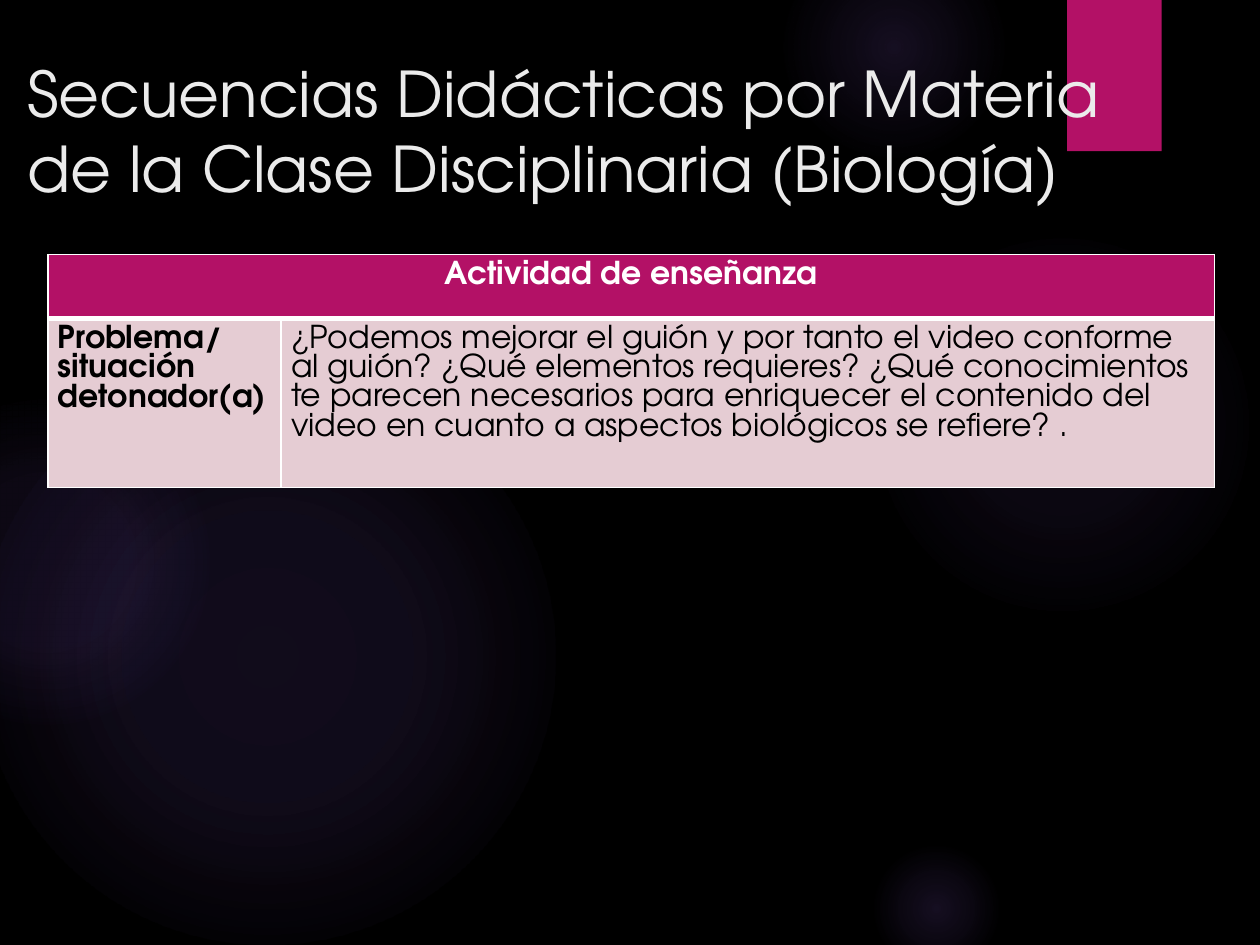
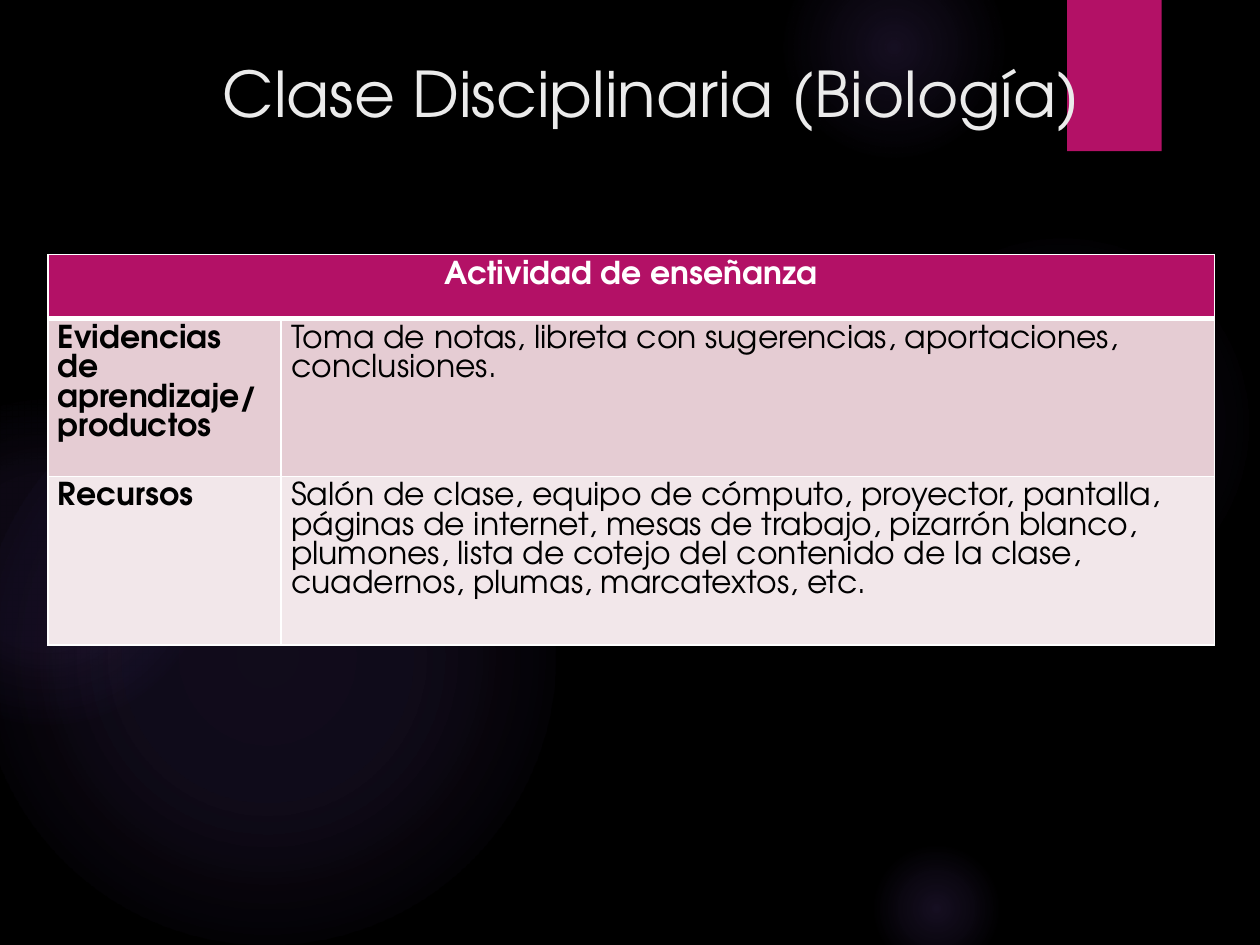
from lxml import etree
from pptx import Presentation
from pptx.dml.color import RGBColor
from pptx.enum.shapes import MSO_SHAPE
from pptx.enum.text import MSO_ANCHOR, PP_ALIGN
from pptx.oxml import parse_xml
from pptx.oxml.ns import nsdecls, qn
from pptx.util import Inches, Pt

ELLIPSE, RECTANGLE = MSO_SHAPE.OVAL, MSO_SHAPE.RECTANGLE
TOP = MSO_ANCHOR.TOP
LEFT, CENTER = PP_ALIGN.LEFT, PP_ALIGN.CENTER

FONT = "TeX Gyre Adventor"
BLACK, WHITE, TITLE_GREY = "000000", "FFFFFF", "EBEBEB"
MAGENTA, GLOW = "B31166", "9B6BF2"
ROW_TINTS = ("E5CCD3", "F2E7EA")

# left, top, diameter, then (position %, opacity %) of each gradient stop
GLOWS = (
    (6.89, 1.83, 3.08, ((0, 7), (36, 6), (69, 0))),
    (6.22, -0.5, 1.75, ((0, 14), (36, 7), (73, 0))),
    (6.89, 6.67, 1.08, ((0, 14), (36, 7), (66, 0))),
    (-0.17, 2.92, 4.58, ((0, 11), (36, 10), (75, 0))),
    (-0.92, 3.17, 2.58, ((0, 8), (36, 8), (72, 0))),
)
RIBBON_BOX = (8.47, 0, 0.75, 1.2)
TABLE_LEFT, TABLE_TOP = 0.38, 2.02
COLUMN_WIDTHS = (1.85, 7.41)
HEADER_HEIGHT = 0.51
HEADING = "Actividad de enseñanza"

SLIDES = (
    {
        "title": "Secuencias Didácticas por Materia\vde la Clase Disciplinaria (Biología)",
        "title_box": (0.12, 0.38, 9.88, 1.56),
        "rows": (
            (1.34, "Problema/\nsituación detonador(a)",
             "¿Podemos mejorar el guión y por tanto el video conforme al guión? "
             "¿Qué elementos requieres? ¿Qué conocimientos te parecen necesarios "
             "para enriquecer el contenido del video en cuanto a aspectos "
             "biológicos se refiere? ."),
        ),
    },
    {
        "title": "Clase Disciplinaria (Biología)",
        "title_box": (1.67, 0.38, 7.62, 1.56),
        "rows": (
            (1.25, "Evidencias de aprendizaje/\nproductos",
             "Toma de notas, libreta con sugerencias, aportaciones, conclusiones."),
            (1.34, "Recursos",
             "Salón de clase, equipo de cómputo, proyector, pantalla, páginas de "
             "internet, mesas de trabajo, pizarrón blanco, plumones, lista de "
             "cotejo del contenido de la clase, cuadernos, plumas, marcatextos, etc."),
        ),
    },
)


def rgb(hex_value):
    return RGBColor.from_string(hex_value)


def inches(box):
    return [Inches(length) for length in box]


def set_solid(fill, color):
    fill.solid()
    fill.fore_color.rgb = rgb(color)


def write_text(frame, text, size, color, bold=False, align=LEFT, line_spacing=None):
    frame.word_wrap = True
    frame.text = text
    for paragraph in frame.paragraphs:
        paragraph.alignment = align
        if line_spacing:
            paragraph.line_spacing = Pt(line_spacing)
        for run in paragraph.runs:
            for attribute, value in {"name": FONT, "size": Pt(size), "bold": bold}.items():
                setattr(run.font, attribute, value)
            run.font.color.rgb = rgb(color)


def add_plain_shape(slide, kind, box):
    shape = slide.shapes.add_shape(kind, *inches(box))
    shape.shadow.inherit = False
    shape.line.fill.background()
    return shape


def add_glow(slide, left, top, diameter, stops):
    """A circle that fades out from its centre."""
    glow = add_plain_shape(slide, ELLIPSE, (left, top, diameter, diameter))
    glow.fill.background()
    stop_xml = "".join(
        f'<a:gs pos="{position * 1000}"><a:srgbClr val="{GLOW}">'
        f'<a:alpha val="{opacity * 1000}"/></a:srgbClr></a:gs>'
        for position, opacity in stops)
    gradient = parse_xml(
        f'<a:gradFill {nsdecls("a")} rotWithShape="1"><a:gsLst>{stop_xml}</a:gsLst>'
        '<a:path path="circle"><a:fillToRect l="50000" t="50000" r="50000" b="50000"/>'
        '</a:path></a:gradFill>')
    properties = glow.fill._xPr
    properties.replace(properties.find(qn("a:noFill")), gradient)


def add_ribbon(slide, box):
    ribbon = add_plain_shape(slide, RECTANGLE, box)
    set_solid(ribbon.fill, MAGENTA)
    effects = ribbon._element.spPr.find(qn("a:effectLst"))
    effects.append(parse_xml(
        f'<a:outerShdw {nsdecls("a")} blurRad="{Pt(3)}" dist="{Pt(2)}" dir="5400000">'
        f'<a:srgbClr val="{BLACK}"><a:alpha val="45000"/></a:srgbClr></a:outerShdw>'))


def add_backdrop(slide):
    set_solid(slide.background.fill, BLACK)
    for glow in GLOWS:
        add_glow(slide, *glow)
    add_ribbon(slide, RIBBON_BOX)


def add_title(slide, text, box):
    frame = slide.shapes.add_textbox(*inches(box)).text_frame
    frame.vertical_anchor = TOP
    write_text(frame, text, 36, TITLE_GREY)


def set_borders(cell, top, bottom):
    """White rules: 1 pt at the sides, the given widths above and below."""
    properties = cell._tc.get_or_add_tcPr()
    for side, width in {"L": 1, "R": 1, "T": top, "B": bottom}.items():
        rule = etree.SubElement(properties, qn(f"a:ln{side}"), w=str(Pt(width)))
        fill = etree.SubElement(rule, qn("a:solidFill"))
        etree.SubElement(fill, qn("a:srgbClr"), val=WHITE)


def style_cell(cell, fill, top=1, bottom=1):
    margins = {"margin_left": 0.08, "margin_right": 0.08,
               "margin_top": 0.05, "margin_bottom": 0}
    for attribute, value in margins.items():
        setattr(cell, attribute, Inches(value))
    set_borders(cell, top, bottom)
    set_solid(cell.fill, fill)


def add_activity_table(slide, left, top, rows):
    heights = [HEADER_HEIGHT] + [height for height, _, _ in rows]
    box = inches((left, top, sum(COLUMN_WIDTHS), sum(heights)))
    table = slide.shapes.add_table(len(heights), len(COLUMN_WIDTHS), *box).table
    for column, width in zip(table.columns, COLUMN_WIDTHS):
        column.width = Inches(width)
    for row, height in zip(table.rows, heights):
        row.height = Inches(height)

    heading = table.cell(0, 0)
    heading.merge(table.cell(0, 1))
    for cell in table.rows[0].cells:
        style_cell(cell, MAGENTA, bottom=3)
    write_text(heading.text_frame, HEADING, 18, WHITE, True, CENTER, 16.75)

    for index, (_, label, description) in enumerate(rows):
        tint = ROW_TINTS[index % len(ROW_TINTS)]
        for column, text in enumerate((label, description)):
            cell = table.cell(index + 1, column)
            style_cell(cell, tint, top=3 if index == 0 else 1)
            write_text(cell.text_frame, text, 18, BLACK, column == 0, line_spacing=16.75)


def main():
    deck = Presentation()
    deck.slide_width, deck.slide_height = inches((10, 7.5))
    for content in SLIDES:
        slide = deck.slides.add_slide(deck.slide_layouts[6])
        add_backdrop(slide)
        add_title(slide, content["title"], content["title_box"])
        add_activity_table(slide, TABLE_LEFT, TABLE_TOP, content["rows"])
    deck.save("out.pptx")


if __name__ == "__main__":
    main()
